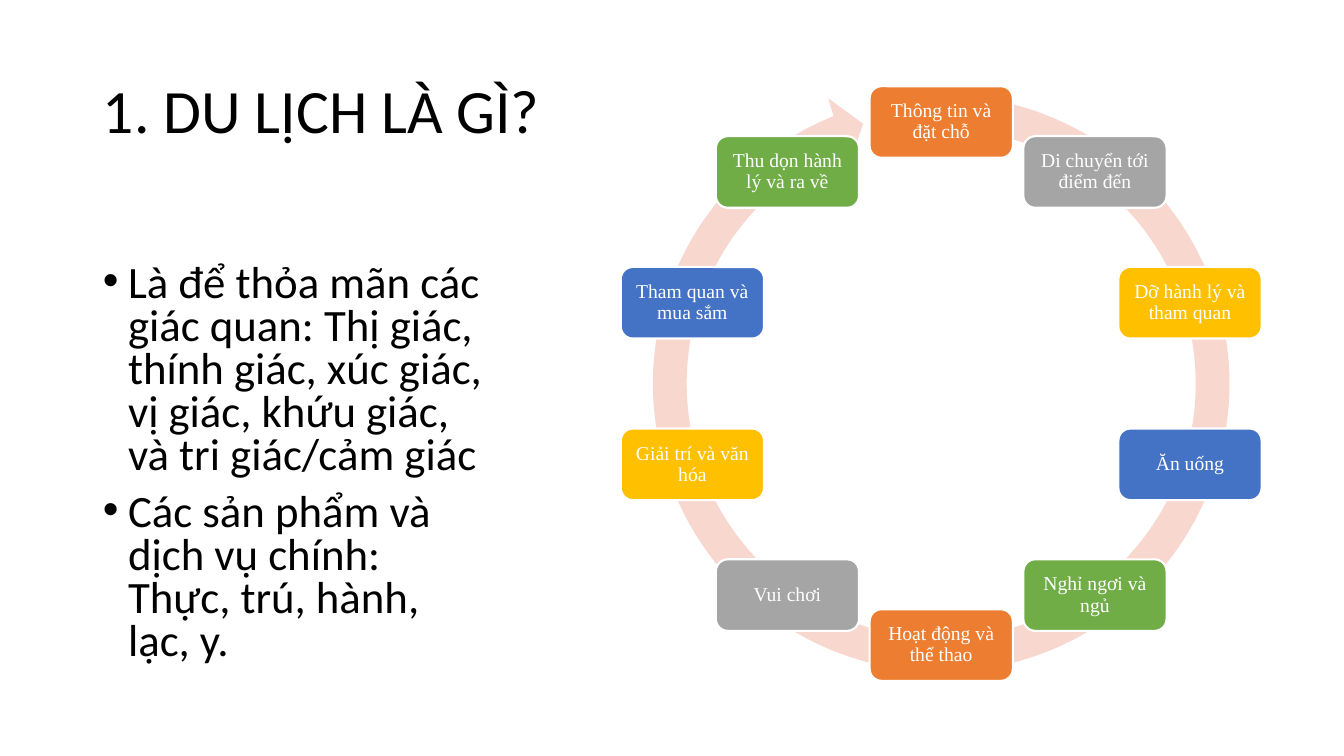
from math import cos, radians, sin

from pptx import Presentation
from pptx.dml.color import RGBColor
from pptx.enum.shapes import MSO_SHAPE as SHAPE
from pptx.enum.text import MSO_ANCHOR as ANCHOR, MSO_AUTO_SIZE as AUTO, PP_ALIGN as ALIGN
from pptx.util import Inches, Pt

BLACK = RGBColor(0x00, 0x00, 0x00)
WHITE = RGBColor(0xFF, 0xFF, 0xFF)
RING = RGBColor(0xF8, 0xD7, 0xCE)
ORANGE = RGBColor(0xED, 0x7D, 0x31)
GREY = RGBColor(0xA5, 0xA5, 0xA5)
GOLD = RGBColor(0xFF, 0xC0, 0x00)
BLUE = RGBColor(0x44, 0x72, 0xC4)
GREEN = RGBColor(0x70, 0xAD, 0x47)
STEP_COLORS = [ORANGE, GREY, GOLD, BLUE, GREEN]

TITLE = "1. DU LỊCH LÀ GÌ?"
POINTS = [
    "Là để thỏa mãn các giác quan: Thị giác, thính giác, xúc giác, vị giác, "
    "khứu giác, và tri giác/cảm giác",
    "Các sản phẩm và dịch vụ chính: Thực, trú, hành, lạc, y.",
]
STEPS = [
    "Thông tin và đặt chỗ", "Di chuyển tới điểm đến", "Dỡ hành lý và tham quan",
    "Ăn uống", "Nghỉ ngơi và ngủ", "Hoạt động và thể thao", "Vui chơi",
    "Giải trí và văn hóa", "Tham quan và mua sắm", "Thu dọn hành lý và ra về",
]

TITLE_FORMAT = {"name": "Calibri", "size": Pt(44), "bold": False}
BODY_FORMAT = {"name": "Calibri", "size": Pt(32), "bold": False}
STEP_FORMAT = {"name": "Times New Roman", "size": Pt(14), "bold": False}


def set_attrs(obj, values):
    """Set each named attribute of an object."""
    for name, value in values.items():
        setattr(obj, name, value)


def place(sp, box):
    """Move a shape to a box given in inches."""
    for name, value in zip(("left", "top", "width", "height"), box):
        setattr(sp, name, Inches(value))


def write(p, text, font, color, align, spacing, before=0):
    """Put one formatted run in a paragraph."""
    set_attrs(p, {"alignment": align, "line_spacing": spacing,
                  "space_before": Pt(before), "space_after": Pt(0)})
    r = p.add_run()
    r.text = text
    set_attrs(r.font, font)
    r.font.color.rgb = color


def add_title(s, box):
    """Fill the title placeholder."""
    sp = s.shapes.title
    place(sp, box)
    tf = sp.text_frame
    set_attrs(tf, {"vertical_anchor": ANCHOR.MIDDLE, "auto_size": AUTO.NONE})
    write(tf.paragraphs[0], TITLE, TITLE_FORMAT, BLACK, ALIGN.LEFT, 0.9)


def add_points(s, box):
    """Fill the body placeholder with the bulleted points."""
    sp = s.placeholders[1]
    place(sp, box)
    tf = sp.text_frame
    set_attrs(tf, {"vertical_anchor": ANCHOR.TOP, "auto_size": AUTO.NONE})
    for i, text in enumerate(POINTS):
        p = tf.add_paragraph() if i else tf.paragraphs[0]
        write(p, text, BODY_FORMAT, BLACK, ALIGN.LEFT, 0.8, 10)
        pPr = p._p.get_or_add_pPr()
        pPr.set("marL", str(Inches(0.25)))
        pPr.set("indent", str(-Inches(0.25)))


def add_shape(s, kind, box, color):
    """Add a filled shape without a shadow."""
    sp = s.shapes.add_shape(kind, *map(Inches, box))
    sp.shadow.inherit = False
    sp.fill.solid()
    sp.fill.fore_color.rgb = color
    return sp


def add_step(s, box, text, color):
    """Add one rounded step with its label."""
    sp = add_shape(s, SHAPE.ROUNDED_RECTANGLE, box, color)
    sp.line.color.rgb = WHITE
    sp.line.width = Pt(1.5)
    tf = sp.text_frame
    set_attrs(tf, {"word_wrap": True, "vertical_anchor": ANCHOR.MIDDLE})
    for side in ("left", "top", "right", "bottom"):
        setattr(tf, f"margin_{side}", Inches(0.06))
    write(tf.paragraphs[0], text, STEP_FORMAT, WHITE, ALIGN.CENTER, 0.9)


def add_cycle(s, box):
    """Draw the ring arrow and spread the steps evenly around it."""
    left, top, size, _ = box
    ring = add_shape(s, SHAPE.CIRCULAR_ARROW, box, RING)
    ring.line.fill.background()
    for i, value in enumerate((0.055, 3.31, 148.65, 167.53, 0.058)):
        ring.adjustments[i] = value
    radius, w, h = 0.426 * size, 1.42, 0.71
    for i, text in enumerate(STEPS):
        angle = radians(360 * i / len(STEPS))
        x = left + size / 2 + radius * sin(angle)
        y = top + size / 2 - radius * cos(angle)
        color = STEP_COLORS[i % len(STEP_COLORS)]
        add_step(s, (x - w / 2, y - h / 2, w, h), text, color)


def main():
    """Build and save the slide."""
    prs = Presentation()
    set_attrs(prs, {"slide_width": Inches(13.33), "slide_height": Inches(7.5)})
    s = prs.slides.add_slide(prs.slide_layouts[1])
    add_title(s, (0.92, 0.4, 11.5, 1.45))
    add_points(s, (0.92, 2.57, 4, 4.19))
    add_cycle(s, (6.29, 0.76, 6.09, 6.09))
    prs.save("out.pptx")


if __name__ == "__main__":
    main()
